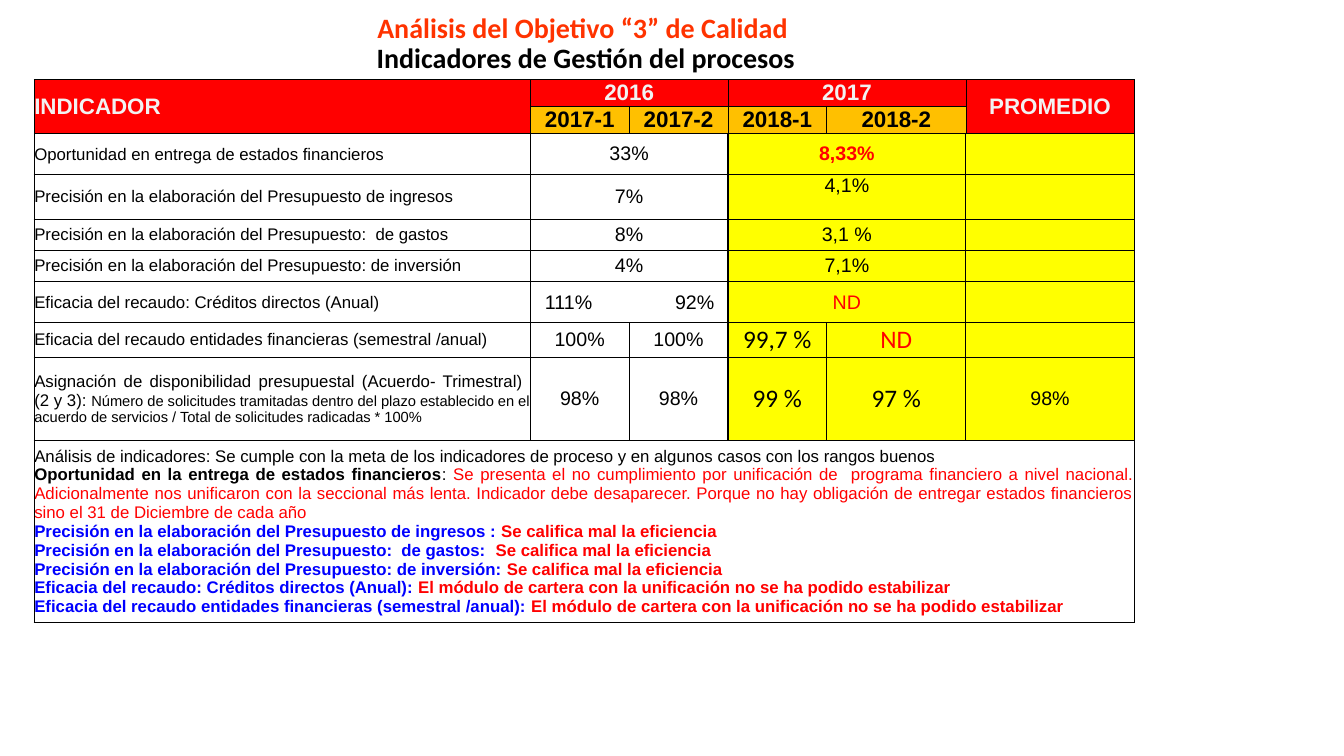
from pptx import Presentation
from pptx.dml.color import RGBColor as RGB
from pptx.enum.text import MSO_ANCHOR as ANCHOR, PP_ALIGN as ALIGN
from pptx.oxml.ns import qn
from pptx.util import Inches, Pt
from lxml.etree import SubElement as Sub

THEME = {
    "orange": "FF3300", "black": "000000", "white": "FFFFFF", "pale": "F2F2F2",
    "red": "FF0000", "amber": "FFC000", "yellow": "FFFF00", "blue": "0000FF",
    "title": 20, "head": 16, "big": 18, "value": 14, "label": 12, "small": 10.5,
    "sans": "Arial", "alt": "Calibri",
}
COLS = [4.92, 0.98, 0.98, 0.98, 1.38, 1.67]
ROWS = [0.26, 0.25, 0.41, 0.44, 0.31, 0.31, 0.41, 0.34, 0.83, 1.69]


def style(font, size, color="black", bold=False, face="sans"):
    font.size, font.bold, font.name = Pt(THEME[size]), bold, THEME[face]
    font.color.rgb = RGB.from_string(THEME[color])


def put(row, col, text, fill, size, align=ALIGN.CENTER, span=(1, 1), **look):
    cell = grid.cell(row, col)
    if span != (1, 1):
        cell.merge(grid.cell(row + span[0] - 1, col + span[1] - 1))
    cell.fill.solid()
    cell.fill.fore_color.rgb = RGB.from_string(THEME[fill])
    para = cell.text_frame.paragraphs[0]
    para.alignment = align
    if text:
        para.text = text
    style(para.font, size, **look)
    return cell


deck = Presentation()
deck.slide_width, deck.slide_height = Inches(13.33), Inches(7.5)
slide = deck.slides.add_slide(deck.slide_layouts[6])

# Title
box = slide.shapes.add_textbox(Inches(0.5), 0, Inches(10.62), Inches(0.79))
frame = box.text_frame
frame.word_wrap, frame.vertical_anchor = True, ANCHOR.BOTTOM
for i, (text, color) in enumerate([
        ("Análisis del Objetivo “3” de Calidad ", "orange"),
        ("Indicadores de Gestión del procesos", "black")]):
    para = frame.add_paragraph() if i else frame.paragraphs[0]
    para.text, para.alignment, para.line_spacing = text, ALIGN.CENTER, 0.9
    style(para.font, "title", color, True, "alt")

# Empty grid: sizes, margins and borders
grid = slide.shapes.add_table(len(ROWS), len(COLS), Inches(0.34), Inches(0.79),
                              Inches(sum(COLS)), Inches(sum(ROWS))).table
grid.first_row = grid.horz_banding = False
for col, width in zip(grid.columns, COLS):
    col.width = Inches(width)
for r, height in enumerate(ROWS):
    grid.rows[r].height = Inches(height)
    for cell in grid.rows[r].cells:
        cell.margin_left = cell.margin_right = 0
        cell.margin_top = cell.margin_bottom = 0
        cell.vertical_anchor = ANCHOR.MIDDLE
        for side in ("a:lnL", "a:lnR", "a:lnT", "a:lnB"):
            line = Sub(cell._tc.get_or_add_tcPr(), qn(side),
                       w=str(Pt(0.5 if r < 2 else 1)))
            Sub(Sub(line, qn("a:solidFill")), qn("a:srgbClr"), val=THEME["black"])

# Header
for col, text, span, align in [
        (0, "INDICADOR", (2, 1), ALIGN.LEFT), (1, "2016", (1, 2), ALIGN.CENTER),
        (3, "2017", (1, 2), ALIGN.CENTER), (5, "PROMEDIO", (2, 1), ALIGN.CENTER)]:
    put(0, col, text, "red", "head", align, span, color="pale", bold=True)
for col, text in enumerate(["2017-1", "2017-2", "2018-1", "2018-2"], 1):
    put(1, col, text, "amber", "head", bold=True)

# Indicators: label, values of each year, average
DATA = [
    ("Oportunidad en entrega de estados financieros", ["33%"], ["8,33%"], ""),
    ("Precisión en la elaboración del Presupuesto de ingresos", ["7%"], ["4,1%"], ""),
    ("Precisión en la elaboración del Presupuesto:  de gastos", ["8%"], ["3,1 %"], ""),
    ("Precisión en la elaboración del Presupuesto: de inversión", ["4%"], ["7,1%"], ""),
    ("Eficacia del recaudo: Créditos directos (Anual)", ["\t111%\t92%"], ["ND"], ""),
    ("Eficacia del recaudo entidades financieras (semestral /anual)",
     ["100%", "100%"], ["99,7 %", "ND"], ""),
    ("", ["98%", "98%"], ["99 %", "97 %"], "98%"),
]
for r, (label, old, new, mean) in enumerate(DATA, 2):
    put(r, 0, label, "white", "label", ALIGN.JUSTIFY)
    for start, values, fill in [(1, old, "white"), (3, new, "yellow")]:
        span = (1, 3 - len(values))
        for col, text in enumerate(values, start):
            wide = fill == "yellow" and len(values) == 2
            put(r, col, text, fill, "big" if wide else "value", span=span,
                color="red" if text in ("ND", "8,33%") else "black",
                bold=text == "8,33%", face="alt" if wide else "sans")
    put(r, 5, mean, "yellow", "value")
grid.cell(3, 3).vertical_anchor = ANCHOR.TOP

# Two values centred on tab stops in one merged cell
para = grid.cell(6, 1).text_frame.paragraphs[0]
para.alignment = ALIGN.LEFT
tabs = Sub(para._p.get_or_add_pPr(), qn("a:tabLst"))
para._p.pPr.insert(0, tabs)
for stop in (0.38, 1.63):
    Sub(tabs, qn("a:tab"), pos=str(Inches(stop)), algn="ctr")

# Label in two sizes
para = grid.cell(8, 0).text_frame.paragraphs[0]
for text, size in [
        ("Asignación de disponibilidad presupuestal (Acuerdo- Trimestral)  (2 y 3): ", "label"),
        ("Número de solicitudes tramitadas dentro del plazo establecido en el acuerdo "
         "de servicios / Total de solicitudes radicadas * 100%", "small")]:
    run = para.add_run()
    run.text = text
    style(run.font, size)

# Analysis
POOR = "Se califica mal la eficiencia"
LATE = "El módulo de cartera con la unificación no se ha podido estabilizar"
NOTES = [[
    ("Análisis de indicadores: Se cumple con la meta de los indicadores de proceso "
     "y en algunos casos con los rangos buenos", "black", False)], [
    ("Oportunidad en la entrega de estados financieros", "black", True),
    (": ", "black", False),
    ("Se presenta el no cumplimiento por unificación de  programa financiero a nivel "
     "nacional. Adicionalmente nos unificaron con la seccional más lenta. Indicador "
     "debe desaparecer. Porque no hay obligación de entregar estados financieros "
     "sino el 31 de Diciembre de cada año", "red", False)]]
NOTES += [[(topic, "blue", True), (why, "red", True)] for topic, why in [
    ("Precisión en la elaboración del Presupuesto de ingresos : ", POOR),
    ("Precisión en la elaboración del Presupuesto:  de gastos:  ", POOR),
    ("Precisión en la elaboración del Presupuesto: de inversión: ", POOR),
    ("Eficacia del recaudo: Créditos directos (Anual): ", LATE),
    ("Eficacia del recaudo entidades financieras (semestral /anual): ", LATE)]]
frame = put(9, 0, "", "white", "label", span=(1, 6)).text_frame
for i, note in enumerate(NOTES):
    para = frame.add_paragraph() if i else frame.paragraphs[0]
    para.alignment = ALIGN.JUSTIFY
    for text, color, bold in note:
        run = para.add_run()
        run.text = text
        style(run.font, "label", color, bold)

deck.save("out.pptx")
